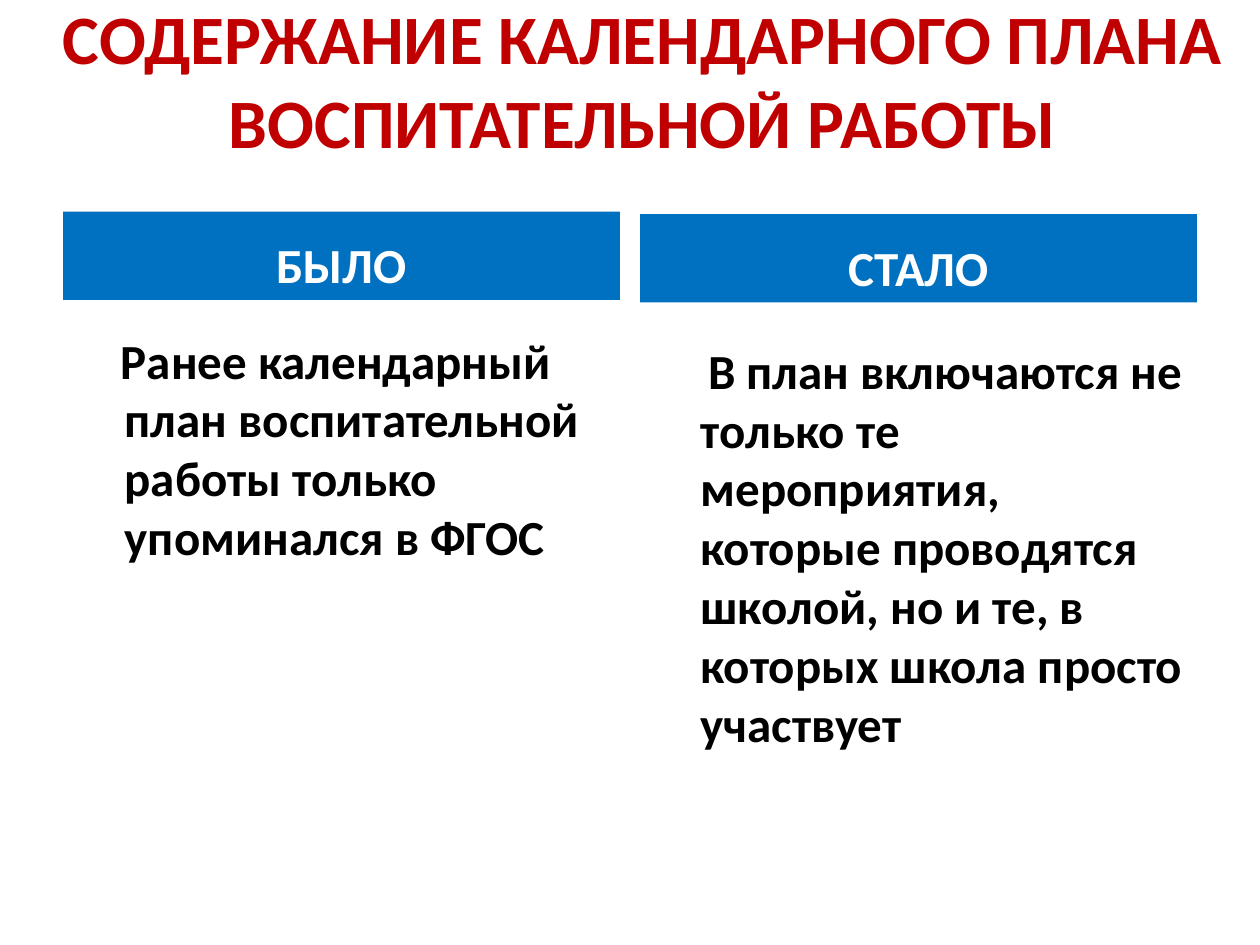
from pptx import Presentation
from pptx.dml.color import RGBColor
from pptx.enum.text import MSO_ANCHOR as ANCHOR, MSO_AUTO_SIZE as AUTO, PP_ALIGN as ALIGN
from pptx.oxml.ns import qn
from pptx.util import Inches, Pt

TITLE = "СОДЕРЖАНИЕ КАЛЕНДАРНОГО ПЛАНА ВОСПИТАТЕЛЬНОЙ РАБОТЫ"
COLUMNS = [
    dict(head="БЫЛО", head_at=(0.5, 1.68), body_at=(0.51, 2.57), indent=-0.03,
         body="Ранее календарный план воспитательной работы только упоминался в ФГОС"),
    dict(head="СТАЛО", head_at=(5.08, 1.7), body_at=(5.08, 2.65), indent=0.06,
         body="В план включаются не только те мероприятия, которые проводятся школой, "
              "но и те, в которых школа просто участвует"),
]
COL_W, HEAD_H, BODY_H = 4.42, 0.7, 4.32


def rgb(value):
    """Turn a hex string into a colour."""
    return RGBColor.from_string(value)


def put_text(sp, text, at, size, color, align=ALIGN.LEFT, anchor=ANCHOR.TOP,
             fill=None, margin=0, indent=0):
    """Place a placeholder and write one bold paragraph in it."""
    sp.left, sp.top, sp.width, sp.height = (Inches(v) for v in at)
    if fill:
        sp.fill.solid()
        sp.fill.fore_color.rgb = rgb(fill)
    tf = sp.text_frame
    tf.word_wrap, tf.auto_size, tf.vertical_anchor = True, AUTO.NONE, anchor
    p = tf.paragraphs[0]
    p.alignment, p.space_before = align, Pt(0)
    pPr = p._p.get_or_add_pPr()
    pPr.set("marL", str(Inches(margin)))
    pPr.set("indent", str(Inches(indent)))
    pPr.append(pPr.makeelement(qn("a:buNone"), {}))
    r = p.add_run()
    r.text = text
    r.font.name, r.font.size, r.font.bold = "Calibri", Pt(size), True
    r.font.color.rgb = rgb(color)


def main():
    """Build the comparison slide."""
    prs = Presentation()
    prs.slide_width, prs.slide_height = Inches(10), Inches(7.5)
    s = prs.slides.add_slide(prs.slide_layouts.get_by_name("Comparison"))
    title, *parts = s.placeholders
    put_text(title, TITLE, (0, 0, 10.2, 1.25), 39.6, "C00000",
             align=ALIGN.CENTER, anchor=ANCHOR.MIDDLE)
    for col, head, body in zip(COLUMNS, parts[::2], parts[1::2]):
        put_text(head, col["head"], (*col["head_at"], COL_W, HEAD_H), 28, "FFFFFF",
                 align=ALIGN.CENTER, anchor=ANCHOR.BOTTOM, fill="0070C0")
        put_text(body, col["body"], (*col["body_at"], COL_W, BODY_H), 28, "000000",
                 margin=0.38, indent=col["indent"])
    prs.save("out.pptx")


if __name__ == "__main__":
    main()
